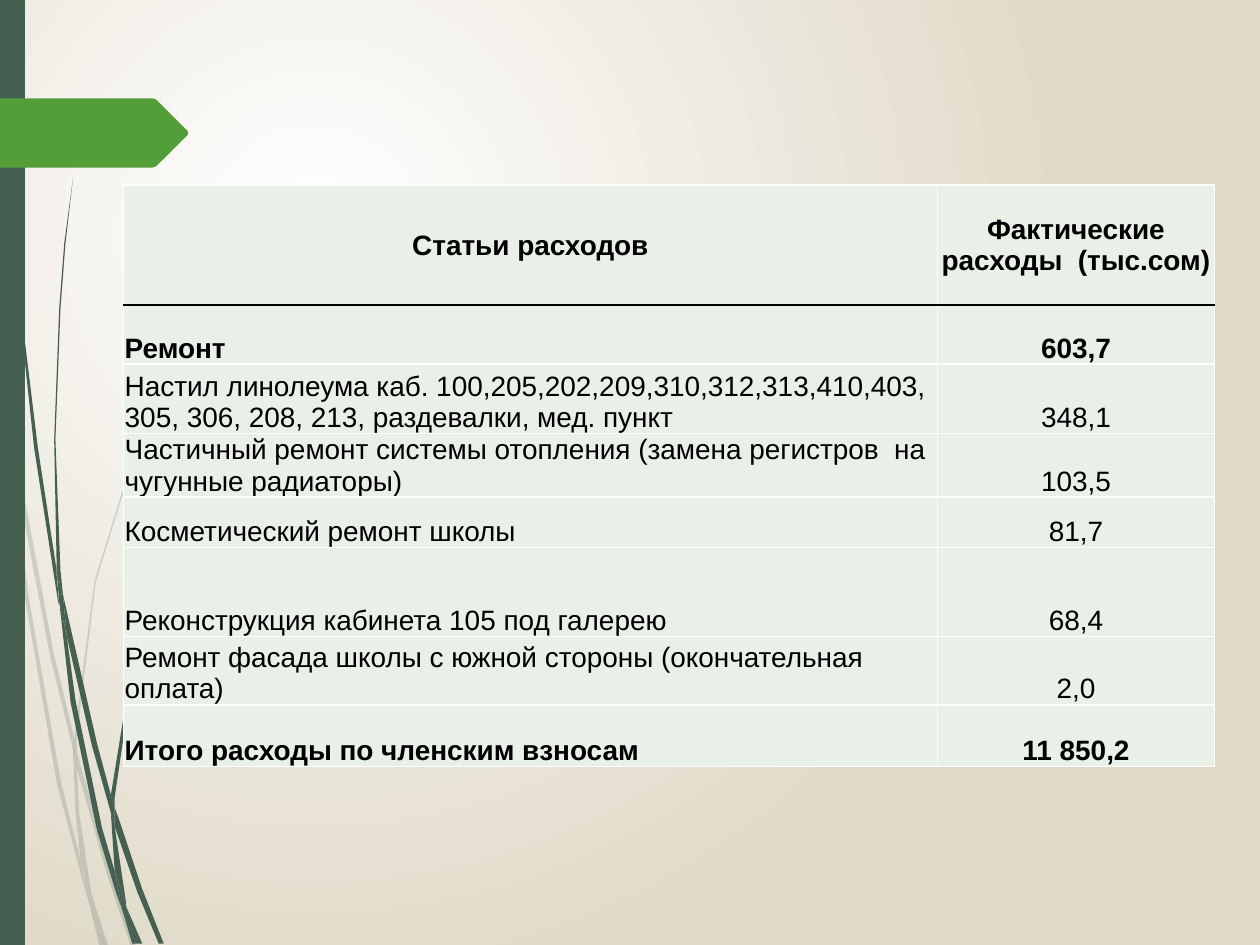
from pptx import Presentation
from pptx.dml.color import RGBColor
from pptx.enum.text import MSO_ANCHOR as Anchor, PP_ALIGN as Align
from pptx.oxml.ns import qn
from pptx.util import Emu, Pt
from lxml.etree import SubElement, Element

SCALE = 9144
COLORS = {"stem": "455F51", "arrow": "549E39", "cell": "E9F0E8", "text": "000000",
          "rule": "FFFFFF", "header_rule": "000000", "center": "FFFFFF", "edge": "E0D9C8"}

PALE_STEMS = [
    [(8, 350), (6, 322), (0, 282), (0, 299), (7, 344)],
    [(40, 522), (59, 599), (59, 586), (43, 520), (10, 345), (12, 376)],
    [(64, 607), (61, 596), (61, 610), (85, 694), (104, 751), (108, 751), (88, 692)],
    [(83, 751), (86, 751), (73, 711)],
    [(64, 683), (48, 619), (22, 469), (12, 376), (8, 350), (19, 470), (45, 621),
     (64, 693), (70, 714), (69, 707)],
    [(58, 599), (60, 646), (64, 683), (67, 692), (73, 711), (72, 706), (63, 646),
     (61, 610), (61, 608)],
    [(61, 584), (76, 462), (111, 349), (159, 245), (187, 198), (201, 175), (217, 154),
     (217, 153), (201, 175), (186, 197), (158, 244), (110, 348), (75, 461), (59, 584),
     (59, 586), (61, 596)],
    [(70, 714), (79, 751), (82, 751)],
    [(61, 608), (61, 610), (61, 596), (59, 586), (58, 599)],
    [(67, 692), (65, 683), (69, 707), (70, 714), (82, 751), (83, 751), (73, 711)],
]
DARK_STEMS = [
    [(5, 110), (14, 233), (27, 355), (46, 477), (47, 481), (45, 457), (45, 453), (30, 355),
     (15, 232), (6, 109), (4, 48), (3, 0), (2, 0), (3, 48)],
    [(73, 592), (88, 645), (88, 633), (88, 631), (77, 590), (50, 472), (53, 505)],
    [(94, 649), (91, 641), (91, 656), (109, 708), (126, 749), (130, 749), (113, 706)],
    [(91, 691), (81, 657), (60, 556), (53, 505), (47, 477), (56, 557), (77, 659),
     (92, 708), (97, 722), (96, 717)],
    [(50, 472), (48, 453), (44, 349), (48, 245), (52, 193), (58, 141), (51, 193),
     (47, 245), (43, 349), (45, 449), (49, 472)],
    [(110, 749), (113, 749), (100, 719)],
    [(47, 477), (53, 505), (50, 472), (49, 472), (45, 449), (45, 453)],
    [(91, 633), (103, 552), (131, 476), (169, 406), (191, 374), (203, 359), (216, 344),
     (215, 344), (203, 358), (191, 373), (168, 405), (129, 474), (101, 551), (88, 631),
     (91, 641)],
    [(97, 722), (105, 749), (108, 749)],
    [(88, 645), (91, 691), (96, 706), (100, 719), (100, 716), (91, 656), (90, 651)],
    [(88, 645), (90, 651), (91, 656), (91, 641), (88, 631), (88, 633)],
    [(96, 706), (91, 691), (96, 717), (97, 722), (108, 749), (110, 749), (100, 719)],
]
SIDE_BAR = [(0, 0), (20, 0), (20, 750), (0, 750)]
ARROW = [(0, 0), (121, 0), (124, 1), (149, 26), (149, 29), (124, 54), (121, 55), (0, 55)]

COLUMNS = [646, 220]
ROWS = [
    (95, True, "Статьи расходов", "Фактические расходы  (тыс.сом)"),
    (47, True, "Ремонт", "603,7"),
    (55, False, "Настил линолеума каб. 100,205,202,209,310,312,313,410,403, "
     "305, 306, 208, 213, раздевалки, мед. пункт", "348,1"),
    (50, False, "Частичный ремонт системы отопления (замена регистров  на "
     "чугунные радиаторы)", "103,5"),
    (40, False, "Косметический ремонт школы", "81,7"),
    (71, False, "Реконструкция кабинета 105 под галерею", "68,4"),
    (54, False, "Ремонт фасада школы с южной стороны (окончательная оплата)", "2,0"),
    (49, True, "Итого расходы по членским взносам", "11 850,2"),
]


def px(length):
    """Turn px into EMU."""
    return Emu(length * SCALE)


def rgb(name):
    """Look up a named colour."""
    return RGBColor.from_string(COLORS[name])


def apply_format(target, values):
    """Set each attribute of the target from a dict."""
    for name, value in values.items():
        setattr(target, name, value)


def paint_background(page):
    """Fill the page with a circular gradient."""
    fill = page.background.fill
    fill.gradient()
    for stop, name in zip(fill.gradient_stops, ("center", "edge")):
        stop.color.rgb = rgb(name)
    gradient = page.background._cSld.find(".//" + qn("a:gradFill"))
    gradient.remove(gradient.find(qn("a:lin")))
    circle = SubElement(gradient, qn("a:path"), path="circle")
    SubElement(circle, qn("a:fillToRect"), l="50000", t="50000", r="100000", b="100000")


def add_outline(page, box, points, color, opacity=100):
    """Draw a filled polygon relative to the box corner."""
    left, top = box
    start, *rest = [(left + x, top + y) for x, y in points]
    builder = page.shapes.build_freeform(*start, scale=SCALE)
    builder.add_line_segments(rest, close=True)
    shape = builder.convert_to_shape()
    shape.shadow.inherit = False
    shape.line.fill.background()
    shape.fill.solid()
    shape.fill.fore_color.rgb = rgb(color)
    if opacity < 100:
        tint = shape._element.spPr.find(".//" + qn("a:srgbClr"))
        SubElement(tint, qn("a:alpha"), val=str(opacity * 1000))


def add_decoration(page, box):
    """Draw the stems, the side bar and the arrow."""
    left, top = box
    for stems, opacity in ((PALE_STEMS, 20), (DARK_STEMS, 100)):
        for stem in stems:
            add_outline(page, box, stem, "stem", opacity)
    add_outline(page, box, SIDE_BAR, "stem")
    add_outline(page, (left, top + 78), ARROW, "arrow")


def set_borders(cell, colors):
    """Give the cell a one-point line on each side."""
    properties = cell._tc.get_or_add_tcPr()
    for index, (side, name) in enumerate(colors.items()):
        line = Element(qn("a:ln" + side), w=str(Pt(1)))
        fill = SubElement(line, qn("a:solidFill"))
        SubElement(fill, qn("a:srgbClr"), val=COLORS[name])
        properties.insert(index, line)


def fill_cell(cell, text, row, column, bold):
    """Write and format one table cell."""
    cell.text = text
    apply_format(cell, {
        "margin_left": px(1), "margin_right": px(1), "margin_top": px(1), "margin_bottom": 0,
        "vertical_anchor": Anchor.BOTTOM if row else Anchor.MIDDLE})
    cell.fill.solid()
    cell.fill.fore_color.rgb = rgb("cell")
    para = cell.text_frame.paragraphs[0]
    para.alignment = Align.LEFT if row and column == 0 else Align.CENTER
    span = para.runs[0]
    apply_format(span.font, {"name": "Arial", "size": Pt(16), "bold": bold})
    span.font.color.rgb = rgb("text")
    set_borders(cell, {"L": "rule", "R": "rule",
                       "T": "header_rule" if row == 1 else "rule",
                       "B": "header_rule" if row == 0 else "rule"})


def add_expenses(page, box):
    """Build the expense table with its top left corner at the box."""
    left, top = box
    size = (sum(COLUMNS), sum(height for height, *_ in ROWS))
    table = page.shapes.add_table(
        len(ROWS), len(COLUMNS), *map(px, (left, top, *size))).table
    table.horz_banding = False
    for column, width in zip(table.columns, COLUMNS):
        column.width = px(width)
    for row, (height, bold, *texts) in enumerate(ROWS):
        table.rows[row].height = px(height)
        for column, text in enumerate(texts):
            fill_cell(table.cell(row, column), text, row, column, bold)


def main():
    """Build and save the deck."""
    deck = Presentation()
    apply_format(deck, {"slide_width": px(1000), "slide_height": px(750)})
    page = deck.slides.add_slide(deck.slide_layouts[6])
    paint_background(page)
    add_decoration(page, (0, 0))
    add_expenses(page, (98, 147))
    deck.save("out.pptx")


if __name__ == "__main__":
    main()
